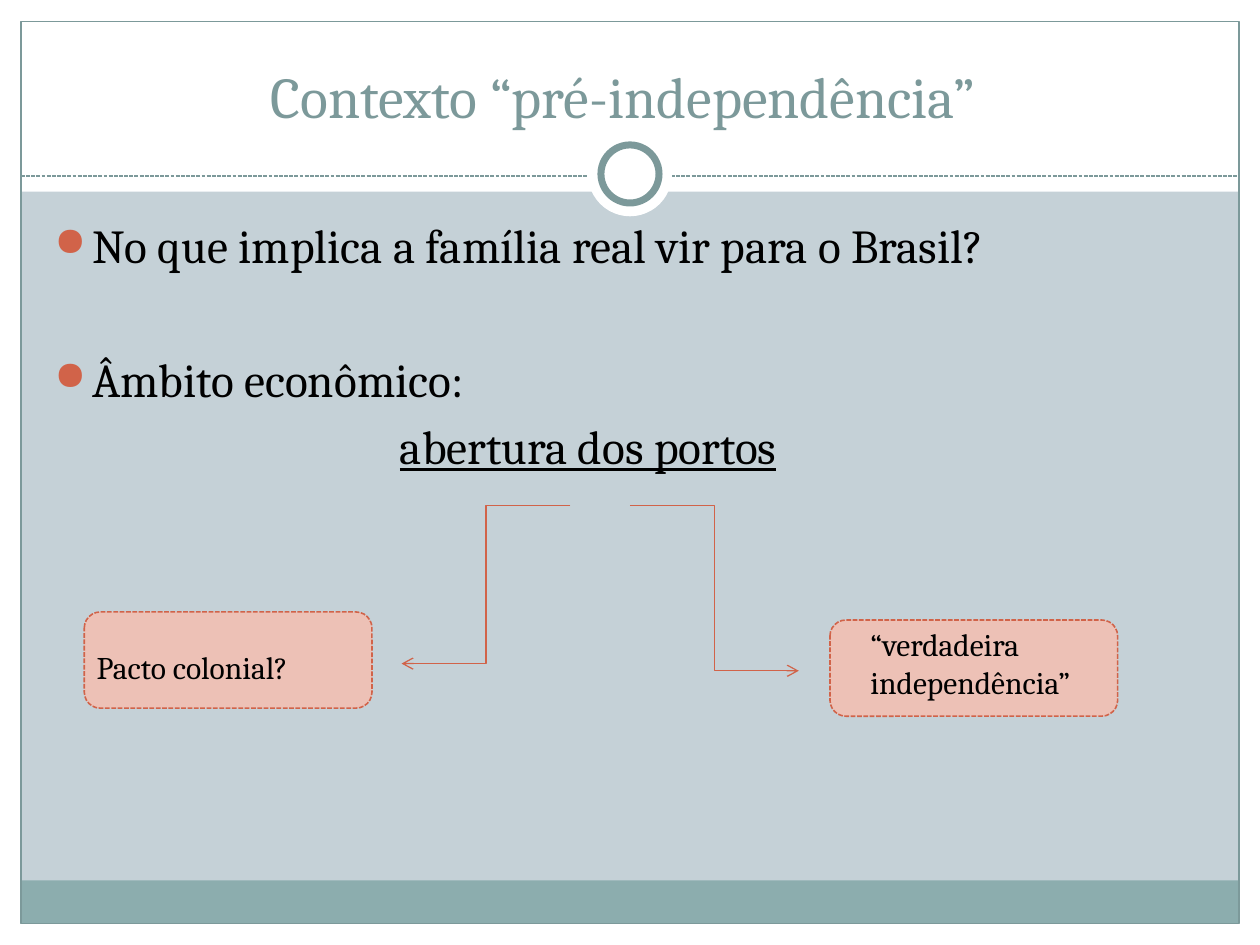
from lxml.etree import SubElement
from pptx import Presentation
from pptx.dml.color import RGBColor
from pptx.enum.dml import MSO_LINE
from pptx.enum.shapes import MSO_CONNECTOR, MSO_SHAPE
from pptx.enum.text import MSO_ANCHOR, PP_ALIGN
from pptx.oxml.ns import qn
from pptx.util import Pt

WHITE = RGBColor(0xFF, 0xFF, 0xFF)
BLACK = RGBColor(0, 0, 0)
BACKGROUND = RGBColor(0xC5, 0xD1, 0xD7)
TEAL = RGBColor(0x8C, 0xAD, 0xAE)
GREY_TEAL = RGBColor(0x7C, 0x99, 0x9A)
RUST = RGBColor(0xD1, 0x63, 0x49)
PINK = RGBColor(0xED, 0xC1, 0xB6)

presentation = Presentation()
presentation.slide_width = Pt(720)
presentation.slide_height = Pt(540)
slide = presentation.slides.add_slide(presentation.slide_layouts[6])
slide.background.fill.solid()
slide.background.fill.fore_color.rgb = BACKGROUND


def add_box(kind, bounds, fill, line=None, width=0.75, dash=None):
    shape = slide.shapes.add_shape(kind, *map(Pt, bounds))
    shape.shadow.inherit = False
    if fill is None:
        shape.fill.background()
    else:
        shape.fill.solid()
        shape.fill.fore_color.rgb = fill
    if line is None:
        shape.line.fill.background()
    else:
        shape.line.color.rgb = line
        shape.line.width = Pt(width)
        shape.line.dash_style = dash


def add_text(bounds, lines, size, color=BLACK):
    text_frame = slide.shapes.add_textbox(*map(Pt, bounds)).text_frame
    text_frame.word_wrap = True
    text_frame.text = "\n".join(lines)
    for paragraph in text_frame.paragraphs:
        font = paragraph.runs[0].font
        font.name = "Cambria"
        font.size = Pt(size)
        font.color.rgb = color
    return text_frame


for bounds, fill in [
    ((0, 528, 720, 12), WHITE),
    ((0, 0, 720, 109.5), WHITE),
    ((0, 0, 12, 540), WHITE),
    ((708, 0, 12, 540), WHITE),
    ((11.8, 503, 696, 24.8), TEAL),
]:
    add_box(MSO_SHAPE.RECTANGLE, bounds, fill)
add_box(MSO_SHAPE.RECTANGLE, (12, 12.2, 696, 515.5), None, GREY_TEAL)

connectors = []
for kind, points, color in [
    (MSO_CONNECTOR.STRAIGHT, (12, 100.6, 708, 100.6), GREY_TEAL),
    (MSO_CONNECTOR.ELBOW, (360, 288.7, 456.5, 383.3), RUST),
    (MSO_CONNECTOR.ELBOW, (326, 288.7, 229.5, 379.2), RUST),
]:
    connector = slide.shapes.add_connector(kind, *map(Pt, points))
    connector.line.color.rgb = color
    connector.line.width = Pt(0.75)
    if kind == MSO_CONNECTOR.ELBOW:
        SubElement(connector.line._get_or_add_ln(), qn("a:tailEnd"), type="arrow")
    else:
        connector.line.dash_style = MSO_LINE.SQUARE_DOT
    SubElement(connector._element.spPr, qn("a:effectLst"))

add_box(MSO_SHAPE.OVAL, (336, 75.6, 48, 48), WHITE)
add_box(MSO_SHAPE.OVAL, (343.4, 82.8, 33.2, 33.2), WHITE, GREY_TEAL, 4)

title = add_text((20, 18, 672, 60), ["Contexto “pré-independência”"], 33, GREY_TEAL)
title.vertical_anchor = MSO_ANCHOR.BOTTOM
title.paragraphs[0].alignment = PP_ALIGN.CENTER

body = add_text(
    (24, 120, 670, 360),
    ["No que implica a família real vir para o Brasil?", "Âmbito econômico:", "abertura dos portos"],
    27,
)
question, scope, opening = body.paragraphs
for paragraph, space in [(question, 6), (scope, 44), (opening, 6)]:
    paragraph.space_before = Pt(space)
for paragraph in (question, scope):
    properties = paragraph._p.get_or_add_pPr()
    properties.set("marL", str(Pt(21.6)))
    properties.set("indent", str(Pt(-21.6)))
    bullet_color = SubElement(properties, qn("a:buClr"))
    SubElement(bullet_color, qn("a:srgbClr"), val=str(RUST))
    SubElement(properties, qn("a:buSzPct"), val="85000")
    SubElement(properties, qn("a:buChar"), char="●")
opening._p.get_or_add_pPr().set("marL", str(Pt(197.5)))
opening.runs[0].font.underline = True

for box, text_bounds, label in [
    ((474.3, 354.3, 164.4, 55), (490.3, 353.6, 181.4, 51), "“verdadeira independência”"),
    ((48.2, 349.7, 164.4, 55), (48.2, 366.5, 164.4, 29), "Pacto colonial?"),
]:
    add_box(MSO_SHAPE.ROUNDED_RECTANGLE, box, PINK, RUST, 0.9, MSO_LINE.SQUARE_DOT)
    add_text(text_bounds, [label], 18)

presentation.save("out.pptx")
